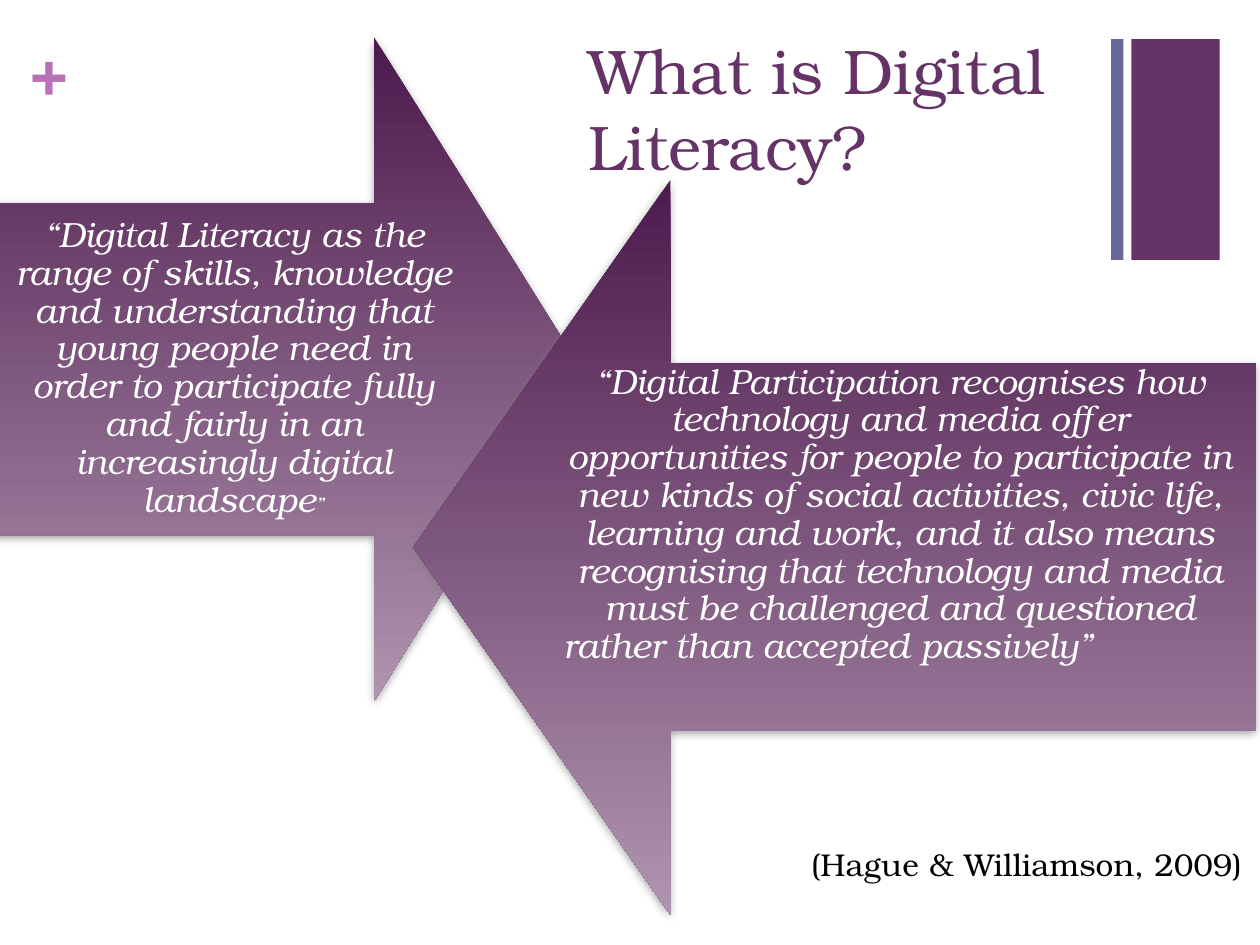
import pptx
import pptx.dml.color
import pptx.enum.shapes
import pptx.enum.text
import pptx.oxml
import pptx.oxml.ns
import pptx.util

Cm = pptx.util.Cm
Pt = pptx.util.Pt
RGB = pptx.dml.color.RGBColor
Shape = pptx.enum.shapes.MSO_SHAPE
Align = pptx.enum.text.PP_ALIGN
Anchor = pptx.enum.text.MSO_ANCHOR

PLUM = RGB(0x66, 0x33, 0x66)
SLATE = RGB(0x66, 0x66, 0x99)
ORCHID = RGB(0xB8, 0x70, 0xB8)
DARK = RGB(0x4D, 0x1A, 0x4D)
PALE = RGB(0xAF, 0x94, 0xAF)
WHITE = RGB(0xFF, 0xFF, 0xFF)
BLACK = RGB(0, 0, 0)

SHADOW = (
    f'<a:effectLst {pptx.oxml.ns.nsdecls("a")}>'
    '<a:outerShdw blurRad="63500" dist="25400" dir="5400000" rotWithShape="0">'
    '<a:srgbClr val="808080"><a:alpha val="75000"/></a:srgbClr>'
    '</a:outerShdw></a:effectLst>'
)


class Deck:
    """Holds the font and the current slide; places are in centimetres."""

    def __init__(self, font):
        self.font = font
        self.file = pptx.Presentation()
        self.file.slide_width = Cm(25.4)
        self.file.slide_height = Cm(19.05)
        self.slide = self.file.slides.add_slide(self.file.slide_layouts[5])

    def style(self, par, size, color, bold=False, slant=False):
        font = par.font
        font.name = self.font
        font.size = Pt(size)
        font.color.rgb = color
        font.bold = bold
        font.italic = slant

    def title(self, text, place):
        box = self.slide.shapes.title
        box.left, box.top, box.width, box.height = map(Cm, place)
        frame = box.text_frame
        frame.text = text
        frame.word_wrap = True
        frame.auto_size = pptx.enum.text.MSO_AUTO_SIZE.NONE
        frame.vertical_anchor = Anchor.TOP
        par = frame.paragraphs[0]
        par.alignment = Align.LEFT
        self.style(par, 36, PLUM)

    def shape(self, kind, place):
        item = self.slide.shapes.add_shape(kind, *map(Cm, place))
        item.shadow.inherit = False
        item.line.fill.background()
        return item

    def bar(self, place, color):
        item = self.shape(Shape.RECTANGLE, place)
        item.fill.solid()
        item.fill.fore_color.rgb = color

    def arrow(self, kind, place):
        item = self.shape(kind, place)
        item.adjustments[0] = 0.5
        item.adjustments[1] = 0.35
        item.fill.gradient()
        item.fill.gradient_angle = 270
        for stop, color, spot in zip(item.fill.gradient_stops, (DARK, PALE), (0, 1)):
            stop.color.rgb = color
            stop.position = spot
        props = item.element.spPr
        old = props.find(pptx.oxml.ns.qn("a:effectLst"))
        props.replace(old, pptx.oxml.parse_xml(SHADOW))

    def box(self, place, inset=None):
        frame = self.slide.shapes.add_textbox(*map(Cm, place)).text_frame
        frame.word_wrap = True
        if inset is not None:
            frame.margin_left = frame.margin_right = Cm(inset)
            frame.margin_top = frame.margin_bottom = Cm(inset)
        return frame

    def label(self, text, place, size, color, bold=False, inset=None):
        par = self.box(place, inset).paragraphs[0]
        par.text = text
        self.style(par, size, color, bold)

    def quote(self, text, place):
        """Add a centred quotation and return its text frame."""
        frame = self.box(place, 0.41)
        frame.vertical_anchor = Anchor.MIDDLE
        self.line(frame.paragraphs[0], text, Align.CENTER)
        return frame

    def line(self, par, text, align):
        par.text = text
        par.alignment = align
        par.line_spacing = 0.9
        self.style(par, 20, WHITE, slant=True)


def main():
    deck = Deck("TeX Gyre Bonum")
    deck.bar((22.81, 0.79, 1.78, 4.45), PLUM)
    deck.label("+", (0.61, 0.64, 0.74, 1.55), 36, ORCHID, bold=True, inset=0)
    deck.bar((22.4, 0.79, 0.25, 4.45), SLATE)

    deck.arrow(Shape.RIGHT_ARROW, (-0.22, 0.75, 11.94, 13.39))
    skills = deck.quote(
        "“Digital Literacy as the range of skills, knowledge and understanding "
        "that young people need in order to participate fully and fairly in an "
        "increasingly digital landscape",
        (-0.2, 4.09, 9.83, 6.68),
    )
    mark = skills.paragraphs[0].add_run()
    mark.text = "”"
    mark.font.size = Pt(12)

    deck.arrow(Shape.LEFT_ARROW, (8.33, 3.63, 16.99, 14.81))
    media = deck.quote(
        "“Digital Participation recognises how technology and media offer "
        "opportunities for people to participate in new kinds of social "
        "activities, civic life, learning and work, and it also means "
        "recognising that technology and media must be challenged and questioned",
        (10.95, 7.32, 14.4, 7.42),
    )
    media.margin_bottom = Cm(1.7)
    deck.line(media.add_paragraph(), "rather than accepted passively”", Align.LEFT)

    deck.label("(Hague & Williamson, 2009)", (16.1, 16.92, 9.22, 1.02), 18, BLACK)
    deck.title("What is Digital Literacy?", (11.61, 0.51, 11.61, 3.1))
    deck.file.save("out.pptx")


if __name__ == "__main__":
    main()
